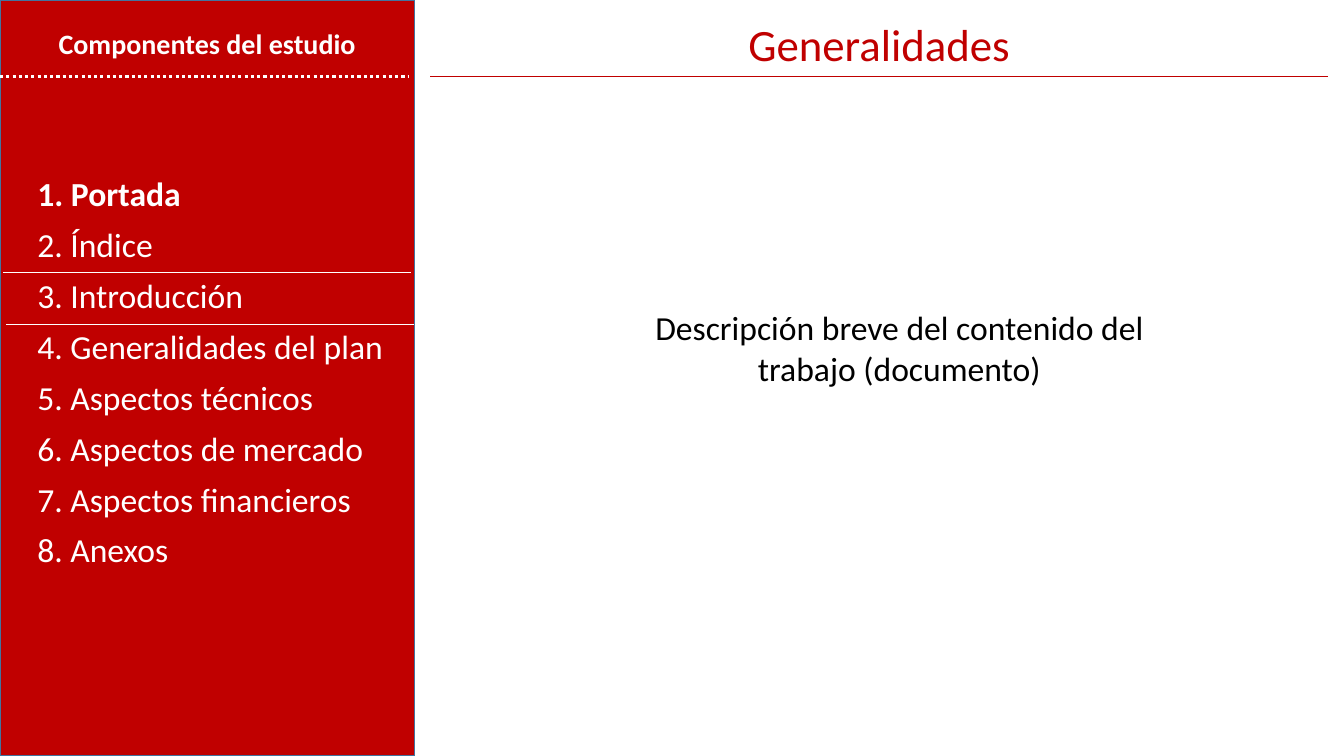
from lxml.etree import SubElement
from pptx import Presentation
from pptx.dml.color import RGBColor
from pptx.enum.dml import MSO_LINE_DASH_STYLE as Dash
from pptx.enum.shapes import MSO_CONNECTOR, MSO_SHAPE
from pptx.enum.text import MSO_ANCHOR, MSO_AUTO_SIZE, PP_ALIGN
from pptx.oxml.ns import qn
from pptx.util import Inches, Pt

COLORS = {name: RGBColor.from_string(value) for name, value in {
    "red": "C00000", "white": "FFFFFF", "black": "000000", "border": "43739E",
}.items()}
PANEL_WIDTH = 4.11
RULE_WIDTH = 4.05
HEADER_BOTTOM = 0.76
CONTENT_LEFT, CONTENT_WIDTH = 4.27, 8.9
LIST_LEFT, LIST_TOP, LIST_PITCH = 0.27, 1.67, 0.51

COMPONENTS = [
    "1. Portada", "2. Índice", "3. Introducción", "4. Generalidades del plan",
    "5. Aspectos técnicos", "6. Aspectos de mercado",
    "7. Aspectos financieros", "8. Anexos",
]


def write(holder, box, lines, size, color, align=PP_ALIGN.CENTER, bold_first=False, gap=0):
    """Place a text holder and fill it with evenly spaced paragraphs."""
    holder.left, holder.top, holder.width, holder.height = map(Inches, box)
    frame = holder.text_frame
    frame.word_wrap = True
    frame.auto_size = MSO_AUTO_SIZE.NONE
    frame.vertical_anchor = MSO_ANCHOR.TOP
    frame.text = "\n".join(lines)
    for index, paragraph in enumerate(frame.paragraphs):
        layout = {"alignment": align, "line_spacing": 1.0,
                  "space_before": Pt(0), "space_after": Pt(gap)}
        for key, value in layout.items():
            setattr(paragraph, key, value)
        font = paragraph.runs[0].font
        letters = {"name": "Calibri", "size": Pt(size), "bold": bold_first and index == 0}
        for key, value in letters.items():
            setattr(font, key, value)
        font.color.rgb = COLORS[color]


prs = Presentation()
prs.slide_width, prs.slide_height = Inches(13.33), Inches(7.5)
slide = prs.slides.add_slide(prs.slide_layouts[1])
shapes = slide.shapes
title, component_list = shapes.title, slide.placeholders[1]

# Side panel, kept behind the title and the list
panel = shapes.add_shape(MSO_SHAPE.RECTANGLE, 0, 0, Inches(PANEL_WIDTH), prs.slide_height)
panel.shadow.inherit = False
panel.fill.solid()
panel.fill.fore_color.rgb = COLORS["red"]
panel.line.color.rgb = COLORS["border"]
panel.line.width = Pt(1)
title.element.addprevious(panel.element)

# Headings and description
panel_heading = shapes.add_textbox(0, 0, 0, 0)
write(panel_heading, (0, 0.21, PANEL_WIDTH, 0.44), ["Componentes del estudio"],
      20, "white", bold_first=True)
write(title, (CONTENT_LEFT, 0.12, CONTENT_WIDTH, 0.64), ["Generalidades"], 32, "red")
description = shapes.add_textbox(0, 0, 0, 0)
write(description, (6.1, 3, 5.64, 0.91),
      ["Descripción breve del contenido del trabajo (documento)"], 24, "black")

# List of components: one row per pitch, without bullets
write(component_list, (LIST_LEFT, LIST_TOP, 4, LIST_PITCH * len(COMPONENTS)), COMPONENTS,
      24, "white", PP_ALIGN.LEFT, bold_first=True, gap=7.5)
for paragraph in component_list.text_frame.paragraphs:
    properties = paragraph._p.get_or_add_pPr()
    properties.set("marL", "0")
    properties.set("indent", "0")
    SubElement(properties, qn("a:buNone"))

# Rules: left, top, width, colour, weight, dash
rules = [
    (0, HEADER_BOTTOM, 4.06, "white", 2.25, Dash.ROUND_DOT),
    (0.03, 2.7, RULE_WIDTH, "white", 0.25, None),
    (0.06, 3.22, RULE_WIDTH, "white", 0.25, None),
    (CONTENT_LEFT, HEADER_BOTTOM, CONTENT_WIDTH, "red", 0.5, None),
]
for left, top, width, color, weight, dash in rules:
    rule = shapes.add_connector(MSO_CONNECTOR.STRAIGHT, Inches(left), Inches(top),
                                Inches(left + width), Inches(top))
    rule.line.color.rgb = COLORS[color]
    rule.line.width = Pt(weight)
    rule.line.dash_style = dash
    SubElement(rule.element.spPr, qn("a:effectLst"))

prs.save("out.pptx")
